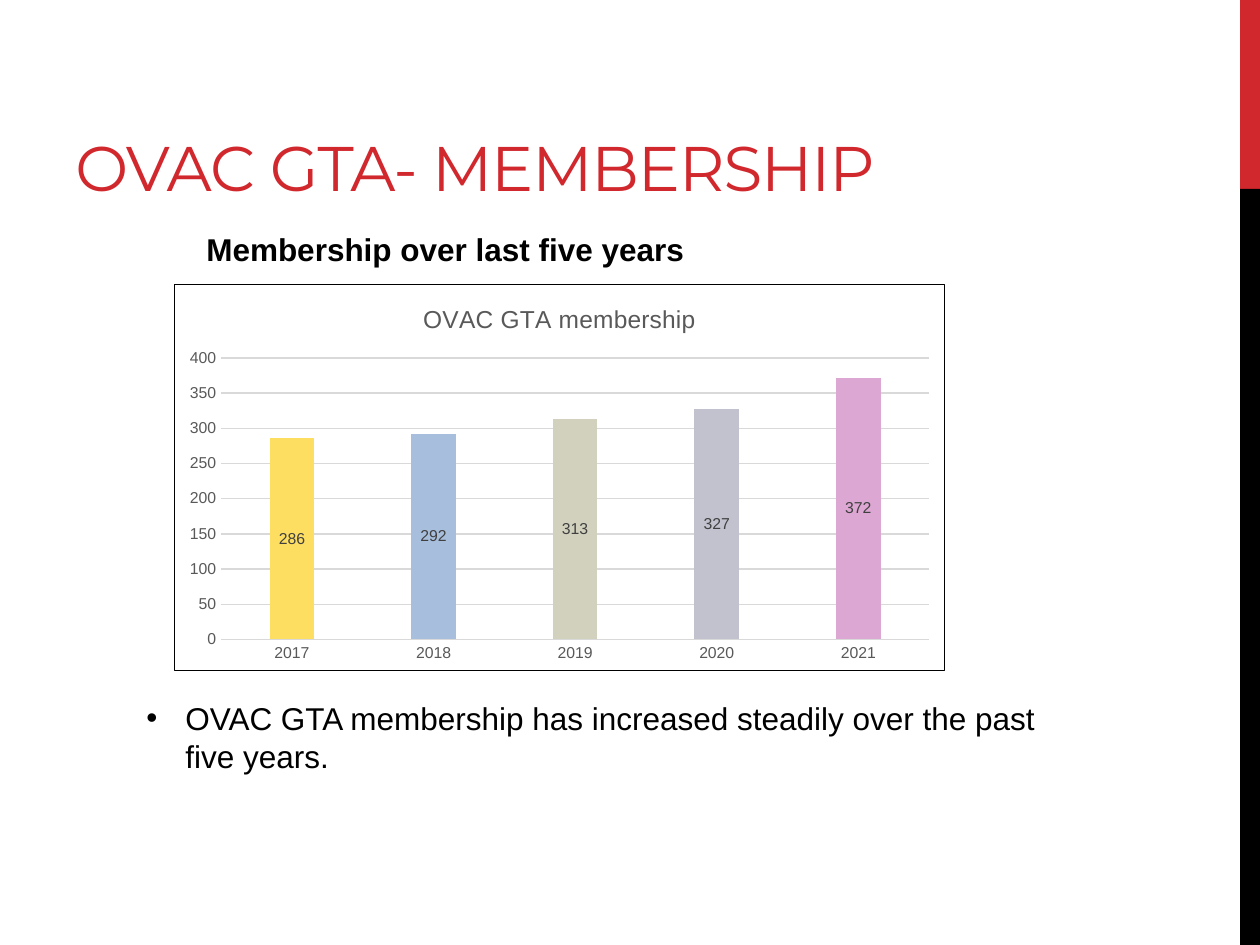
from dataclasses import dataclass

from lxml import etree
from pptx import Presentation
from pptx.chart.data import CategoryChartData
from pptx.dml.color import RGBColor
from pptx.enum.chart import XL_CHART_TYPE, XL_LABEL_POSITION, XL_TICK_MARK
from pptx.enum.shapes import MSO_SHAPE
from pptx.enum.text import MSO_ANCHOR
from pptx.oxml import parse_xml
from pptx.oxml.ns import nsdecls, qn
from pptx.util import Emu, Pt

RECTANGLE = MSO_SHAPE.RECTANGLE
COLUMNS = XL_CHART_TYPE.COLUMN_CLUSTERED
LABEL_CENTER = XL_LABEL_POSITION.CENTER
NO_TICKS = XL_TICK_MARK.NONE
TOP, BOTTOM = MSO_ANCHOR.TOP, MSO_ANCHOR.BOTTOM


@dataclass(frozen=True)
class Theme:
    red: str = "D1282E"
    black: str = "000000"
    white: str = "FFFFFF"
    axis_text: str = "595959"
    label_text: str = "404040"
    grid: str = "D9D9D9"
    series: str = "AFAFAF"
    columns: tuple = ("FEDE61", "A7BFDD", "D2D1BE", "C1C2CD", "DDA7D3")
    heading_font: str = "Montserrat"
    body_font: str = "Arial"
    title_size: int = 36
    body_size: int = 18
    chart_title_size: int = 14
    chart_size: int = 10
    axis_size: int = 9


THEME = Theme()
MEMBERS = {"2017": 286, "2018": 292, "2019": 313, "2020": 327, "2021": 372}


def px(length):
    return Emu(round(length * 914400 / 126))


def rgb(color):
    return RGBColor.from_string(color)


def style_font(font, size, color, name=THEME.body_font, bold=False):
    font.name, font.size, font.bold = name, Pt(size), bold
    font.color.rgb = rgb(color)


def add_text(page, box, text, size=THEME.body_size, color=THEME.black,
             name=THEME.body_font, bold=False, anchor=TOP, spacing=0,
             bullet=None, indent=0):
    frame = page.shapes.add_textbox(*map(px, box)).text_frame
    frame.word_wrap = True
    frame.vertical_anchor = anchor
    para = frame.paragraphs[0]
    span = para.add_run()
    span.text = text
    style_font(span.font, size, color, name, bold)
    if spacing:
        span.font._element.set("spc", str(spacing))
    if bullet:
        settings = para._p.get_or_add_pPr()
        settings.set("marL", str(px(indent)))
        settings.set("indent", str(-px(indent)))
        etree.SubElement(settings, qn("a:buFont"), typeface=name)
        etree.SubElement(settings, qn("a:buChar"), char=bullet)


def add_side_band(page, box):
    left, top, width, height = box
    red_height = height // 5
    parts = ((top, red_height, THEME.red),
             (top + red_height, height - red_height, THEME.black))
    for part_top, part_height, color in parts:
        part = page.shapes.add_shape(
            RECTANGLE, *map(px, (left, part_top, width, part_height)))
        part.shadow.inherit = False
        part.fill.solid()
        part.fill.fore_color.rgb = rgb(color)
        part.line.fill.background()


def style_axes(chart):
    for axis in (chart.category_axis, chart.value_axis):
        axis.major_tick_mark = axis.minor_tick_mark = NO_TICKS
        style_font(axis.tick_labels.font, THEME.axis_size, THEME.axis_text)
    values = chart.value_axis
    values.minimum_scale, values.maximum_scale, values.major_unit = 0, 400, 50
    values.format.line.fill.background()
    values.has_major_gridlines = True
    for line in (chart.category_axis.format.line,
                 values.major_gridlines.format.line):
        line.color.rgb = rgb(THEME.grid)
        line.width = Pt(0.75)


def style_columns(plot):
    plot.gap_width, plot.overlap = 219, -27
    plot.vary_by_categories = False
    series = plot.series[0]
    series.format.fill.solid()
    series.format.fill.fore_color.rgb = rgb(THEME.series)
    for index, color in enumerate(THEME.columns):
        fill = series.points[index].format.fill
        fill.solid()
        fill.fore_color.rgb = rgb(color)
    labels = series.data_labels
    labels.show_value = True
    labels.position = LABEL_CENTER
    style_font(labels.font, THEME.axis_size, THEME.label_text)


def add_chart_frame(chart):
    frame = parse_xml(
        f'<c:spPr {nsdecls("c", "a")}>'
        f'<a:solidFill><a:srgbClr val="{THEME.white}"/></a:solidFill>'
        f'<a:ln w="{Pt(0.5)}"><a:solidFill><a:srgbClr val="{THEME.black}"/>'
        '</a:solidFill></a:ln></c:spPr>')
    chart._chartSpace.find(qn("c:chart")).addnext(frame)


def add_member_chart(page, box, title):
    data = CategoryChartData()
    data.categories = list(MEMBERS)
    data.add_series("Series 1", list(MEMBERS.values()))
    chart = page.shapes.add_chart(COLUMNS, *map(px, box), data).chart
    style_font(chart.font, THEME.chart_size, THEME.black)
    chart.has_legend = False
    chart.has_title = True
    span = chart.chart_title.text_frame.paragraphs[0].add_run()
    span.text = title
    style_font(span.font, THEME.chart_title_size, THEME.axis_text)
    chart.chart_title.include_in_layout = False
    style_axes(chart)
    style_columns(chart.plots[0])
    add_chart_frame(chart)


def add_membership_page(page, box):
    left, top, width, height = box
    # Red and black band on the right edge
    add_side_band(page, (left + width - 20, top, 20, height))
    # Headings
    add_text(page, (left + 63, top + 21, 1063, 189), "OVAC GTA- MEMBERSHIP",
             size=THEME.title_size, color=THEME.red, name=THEME.heading_font,
             anchor=BOTTOM, spacing=-60)
    add_text(page, (left + 194, top + 224, 665, 50),
             "Membership over last five years", bold=True)
    # Members by year
    add_member_chart(page, (left + 174, top + 284, 771, 387),
                     "OVAC GTA membership")
    # Conclusion
    add_text(page, (left + 134, top + 693, 963, 127),
             "OVAC GTA membership has increased steadily over the past "
             "five years.", bullet="•", indent=39)


def main():
    deck = Presentation()
    deck.slide_width, deck.slide_height = px(1260), px(945)
    page = deck.slides.add_slide(deck.slide_layouts[6])
    add_membership_page(page, (0, 0, 1260, 945))
    deck.save("out.pptx")


if __name__ == "__main__":
    main()
